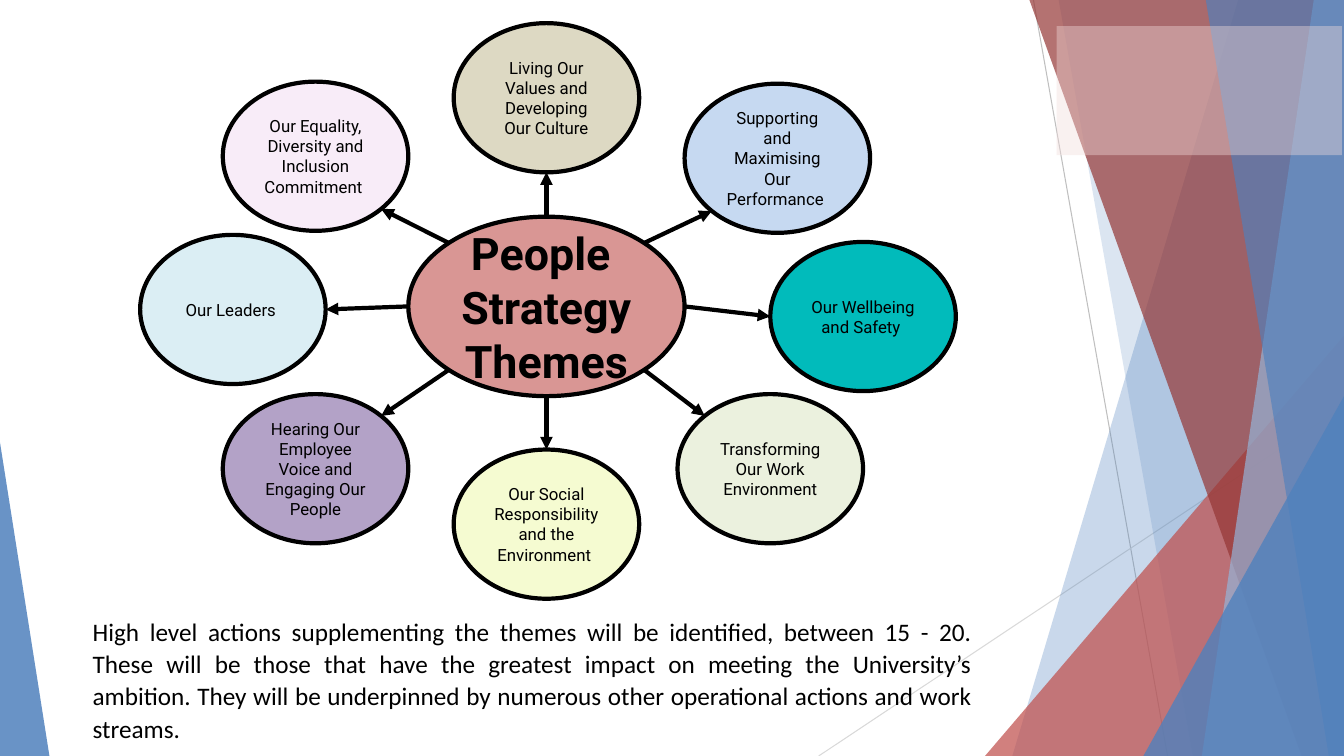
from dataclasses import dataclass
from math import copysign, hypot

from lxml import etree
from pptx import Presentation
from pptx.dml.color import RGBColor
from pptx.enum.shapes import MSO_CONNECTOR, MSO_SHAPE
from pptx.enum.text import MSO_ANCHOR, PP_ALIGN
from pptx.oxml.ns import qn
from pptx.util import Inches, Pt

OVAL, TRIANGLE, RECTANGLE = MSO_SHAPE.OVAL, MSO_SHAPE.ISOSCELES_TRIANGLE, MSO_SHAPE.RECTANGLE
STRAIGHT = MSO_CONNECTOR.STRAIGHT
CENTER, JUSTIFY = PP_ALIGN.CENTER, PP_ALIGN.JUSTIFY
MIDDLE = MSO_ANCHOR.MIDDLE


@dataclass(frozen=True)
class Theme:
    ink: str = "000000"
    blue: str = "4F81BD"
    light_blue: str = "95B3D7"
    red: str = "C0504D"
    dark_red: str = "953735"
    blush: str = "F2DCDB"
    hub: str = "D99694"
    steep_hairline: str = "BFBFBF"
    flat_hairline: str = "D9D9D9"
    diagram_font: str = "Roboto"
    body_font: str = "Calibri"
    hub_size: int = 32
    label_size: int = 12
    body_size: int = 18
    outline: float = 3
    hairline: float = 0.75


@dataclass(frozen=True)
class Box:
    left: float
    top: float
    width: float
    height: float

    @property
    def right(self):
        return self.left + self.width

    @property
    def bottom(self):
        return self.top + self.height

    @property
    def center(self):
        return self.left + self.width / 2, self.top + self.height / 2

    def inches(self):
        return [Inches(v) for v in (self.left, self.top, self.width, self.height)]


THEME = Theme()
SLIDE = Box(0, 0, 13.33, 7.5)
DIAGRAM = Box(1.37, 0.14, 8.1, 5.8)
STATEMENT = Box(0.82, 6.04, 8.92, 1.81)
HUB_SIZE = (2.74, 1.78)
BUBBLE_SIZE = (1.84, 1.48)

HUB_LINES = "People \nStrategy\nThemes"
# label, fill, offset of the bubble's centre from the hub's centre
BUBBLES = [
    ("Living Our Values and Developing Our Culture", "DDD9C3", 0, -2.07),
    ("Supporting and Maximising Our Performance ", "C6D9F1", 2.29, -1.47),
    ("Our Wellbeing and Safety ", "01BBBB", 3.14, 0.1),
    ("Transforming Our Work Environment", "EBF1DE", 2.22, 1.61),
    ("Our Social Responsibility and the Environment ", "F5FBD1", 0, 2.16),
    ("Hearing Our Employee Voice and Engaging Our People", "B3A2C7", -2.29, 1.61),
    ("Our Leaders ", "DBEEF4", -3.11, 0.03),
    ("Our Equality, Diversity and Inclusion Commitment ", "F8ECF8", -2.29, -1.49),
]
STATEMENT_TEXT = (
    "High level actions supplementing the themes will be identified, between 15 - 20. "
    "These will be those that have the greatest impact on meeting the University’s "
    "ambition. They will be underpinned by numerous other operational actions and work "
    "streams. "
)


def paint(shape, color, opacity=100):
    """Fill without outline or shadow; opacity is in percent."""
    shape.shadow.inherit = False
    shape.line.fill.background()
    shape.fill.solid()
    shape.fill.fore_color.rgb = RGBColor.from_string(color)
    if opacity < 100:
        srgb = shape.fill._xPr.find(qn("a:solidFill")).find(qn("a:srgbClr"))
        etree.SubElement(srgb, qn("a:alpha")).set("val", str(opacity * 1000))


def style_text(frame, text, font, size, align, bold=False):
    frame.word_wrap = True
    frame.text = text
    for paragraph in frame.paragraphs:
        paragraph.alignment = align
        for run in paragraph.runs:
            run.font.name = font
            run.font.size = Pt(size)
            run.font.bold = bold
            run.font.color.rgb = RGBColor.from_string(THEME.ink)


def add_line(slide, start, end, color, weight, arrow=False):
    line = slide.shapes.add_connector(STRAIGHT, *(Inches(v) for v in (*start, *end)))
    line.line.color.rgb = RGBColor.from_string(color)
    line.line.width = Pt(weight)
    if arrow:
        etree.SubElement(line.line._get_or_add_ln(), qn("a:tailEnd")).set("type", "triangle")
    etree.SubElement(line._element.spPr, qn("a:effectLst"))


def add_panel(slide, box, top_x, bottom_x, color, opacity):
    """Full-height panel with a slanted left side, reaching the box's right side."""
    corners = [(top_x, box.top), (box.right, box.top),
               (box.right, box.bottom), (bottom_x, box.bottom)]
    points = [(Inches(x), Inches(y)) for x, y in corners]
    builder = slide.shapes.build_freeform(*points[0])
    builder.add_line_segments(points[1:], close=True)
    paint(builder.convert_to_shape(), color, opacity)


def add_corner(slide, box, width, height, color, opacity, on_right=True):
    """Right triangle standing in a bottom corner of the box."""
    left = box.right - width if on_right else box.left
    place = Box(left, box.bottom - height, width, height)
    corner = slide.shapes.add_shape(TRIANGLE, *place.inches())
    corner.adjustments[0] = 1 if on_right else 0
    paint(corner, color, opacity)


def draw_backdrop(slide, box):
    add_line(slide, (10.25, box.top), (11.58, box.bottom), THEME.steep_hairline, THEME.hairline)
    add_line(slide, (box.right, 4.03), (8.12, box.bottom), THEME.flat_hairline, THEME.hairline)
    add_panel(slide, box, 12.28, 10.04, THEME.blue, 30)
    add_panel(slide, box, 10.5, 11.83, THEME.blue, 20)
    add_corner(slide, box, 3.56, 4.17, THEME.red, 72)
    add_panel(slide, box, 10.21, 12.91, THEME.dark_red, 70)
    add_panel(slide, box, 13.03, 11.92, THEME.light_blue, 70)
    add_panel(slide, box, 11.96, 13.18, THEME.blue, 65)
    add_corner(slide, box, 1.99, 3.57, THEME.blue, 80)
    add_corner(slide, box, 0.49, 3.11, THEME.blue, 85, on_right=False)
    plate = Box(box.right - 2.85, box.top + 0.26, 2.83, 1.28)
    paint(slide.shapes.add_shape(RECTANGLE, *plate.inches()), THEME.blush, 40)


def add_ellipse(slide, center, size, color, text, text_size, bold=False):
    (x, y), (width, height) = center, size
    place = Box(x - width / 2, y - height / 2, width, height)
    ellipse = slide.shapes.add_shape(OVAL, *place.inches())
    paint(ellipse, color)
    ellipse.line.color.rgb = RGBColor.from_string(THEME.ink)
    ellipse.line.width = Pt(THEME.outline)
    ellipse.text_frame.vertical_anchor = MIDDLE
    style_text(ellipse.text_frame, text, THEME.diagram_font, text_size, CENTER, bold)


def compass(offset):
    """-1, 0 or 1; small offsets count as none."""
    return 0 if abs(offset) < 0.5 else copysign(1, offset)


def rim_point(center, size, east, south):
    """Point of an ellipse's rim in one of the eight compass directions."""
    reach = 2 * hypot(east, south)
    return center[0] + east * size[0] / reach, center[1] + south * size[1] / reach


def draw_diagram(slide, box):
    hub = box.center
    add_ellipse(slide, hub, HUB_SIZE, THEME.hub, HUB_LINES, THEME.hub_size, bold=True)
    for label, color, dx, dy in BUBBLES:
        center = hub[0] + dx, hub[1] + dy
        east, south = compass(dx), compass(dy)
        add_ellipse(slide, center, BUBBLE_SIZE, color, label, THEME.label_size)
        add_line(slide, rim_point(hub, HUB_SIZE, east, south),
                 rim_point(center, BUBBLE_SIZE, -east, -south),
                 THEME.ink, THEME.outline, arrow=True)


def draw_statement(slide, box):
    frame = slide.shapes.add_textbox(*box.inches()).text_frame
    style_text(frame, STATEMENT_TEXT, THEME.body_font, THEME.body_size, JUSTIFY)
    frame.paragraphs[0].line_spacing = 1.07
    frame.paragraphs[0].space_after = Pt(8)


def main():
    deck = Presentation()
    deck.slide_width, deck.slide_height = Inches(SLIDE.width), Inches(SLIDE.height)
    slide = deck.slides.add_slide(deck.slide_layouts.get_by_name("Blank"))
    draw_backdrop(slide, SLIDE)
    draw_diagram(slide, DIAGRAM)
    draw_statement(slide, STATEMENT)
    deck.save("out.pptx")


if __name__ == "__main__":
    main()
